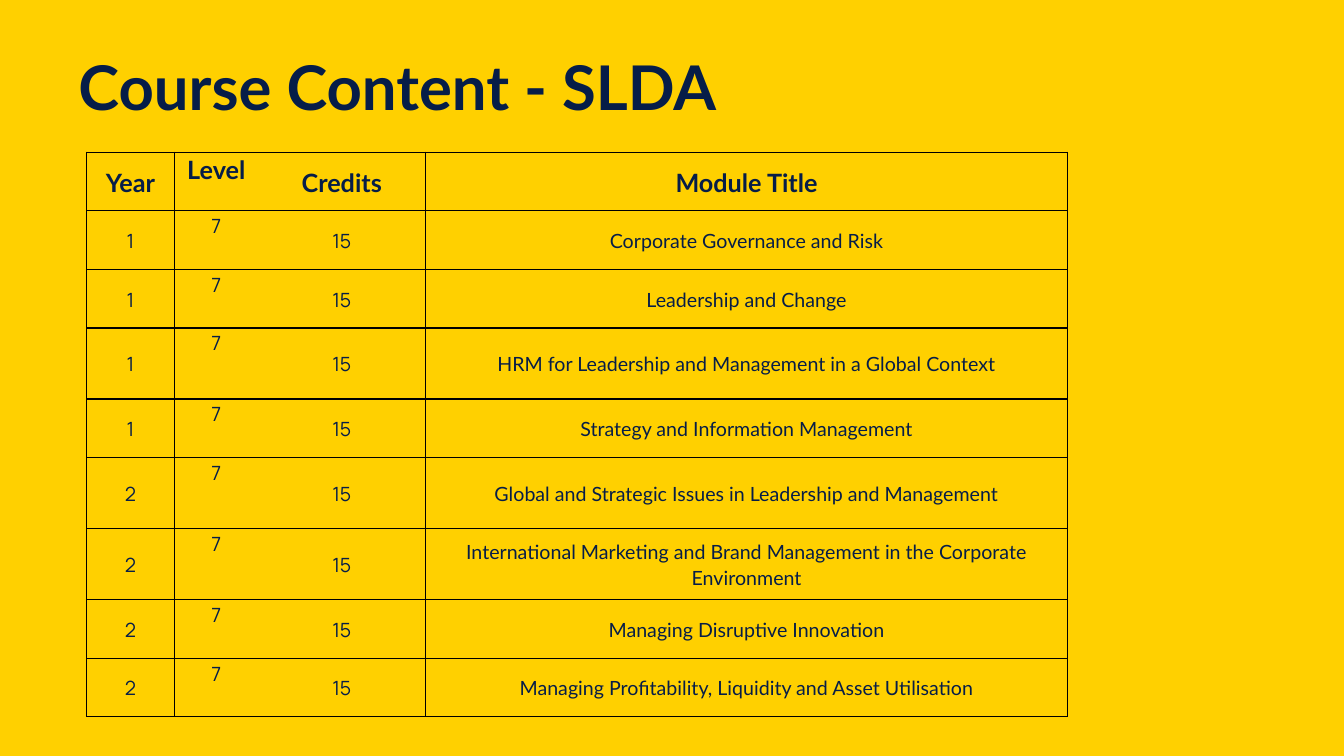
from dataclasses import dataclass

from lxml import etree
from pptx import Presentation
from pptx import util as u
from pptx.dml.color import RGBColor
from pptx.enum import text
from pptx.oxml import ns


@dataclass(frozen=True)
class Theme:
    background: str = "FFD000"
    ink: str = "061D48"
    border: str = "000000"
    border_width: float = 1
    text_font: str = "Lato"
    number_font: str = "Manrope"
    title_size: float = 44
    header_size: float = 18
    body_size: float = 14


THEME = Theme()
SLIDE_WIDTH = u.Inches(13.33)
SLIDE_HEIGHT = u.Inches(7.5)

HEADERS = ("Year", "Level", "Credits", "Module Title")
LEVEL, CREDITS, MODULE = 1, 2, 3
COLUMN_SHARES = (6.53, 6.23, 12.45, 47.79)
ROW_SHARE, TALL_ROW_SHARE = 7.75, 9.4
TALL_ROWS = (3, 5, 6)
MODULES = (
    ("1", "Corporate Governance and Risk"),
    ("1", "Leadership and Change"),
    ("1", "HRM for Leadership and Management in a Global Context"),
    ("1", "Strategy and Information Management"),
    ("2", "Global and Strategic Issues in Leadership and Management"),
    ("2", "International Marketing and Brand Management in the Corporate Environment"),
    ("2", "Managing Disruptive Innovation"),
    ("2", "Managing Profitability, Liquidity and Asset Utilisation"),
)


def across(percent):
    return round(SLIDE_WIDTH * percent / 100)


def down(percent):
    return round(SLIDE_HEIGHT * percent / 100)


def add_span(para, wording, font, size, bold=False):
    span = para.add_run()
    span.text = wording
    span.font.name = font
    span.font.size = u.Pt(size)
    span.font.bold = bold
    span.font.color.rgb = RGBColor.from_string(THEME.ink)


def add_title(page, wording):
    box = page.shapes.add_textbox(across(5.1), down(5.33), across(88.07), down(13.2))
    frame = box.text_frame
    frame.word_wrap = True
    frame.vertical_anchor = text.MSO_ANCHOR.MIDDLE
    para = frame.paragraphs[0]
    para.line_spacing = 0.9
    add_span(para, wording, THEME.text_font, THEME.title_size, True)


def set_borders(cell, open_side):
    properties = cell._tc.get_or_add_tcPr()
    for side in "LRTB":
        line = etree.SubElement(properties, ns.qn(f"a:ln{side}"))
        line.set("w", str(u.Pt(THEME.border_width)))
        if side == open_side:
            etree.SubElement(line, ns.qn("a:noFill"))
        else:
            fill = etree.SubElement(line, ns.qn("a:solidFill"))
            etree.SubElement(fill, ns.qn("a:srgbClr")).set("val", THEME.border)


def fill_cell(cell, wording, column, is_header):
    is_level = column == LEVEL
    set_borders(cell, {LEVEL: "R", CREDITS: "L"}.get(column))
    cell.fill.background()
    cell.margin_left = cell.margin_right = u.Inches(0 if is_level else 0.07)
    cell.margin_top = cell.margin_bottom = 0
    cell.vertical_anchor = text.MSO_ANCHOR.TOP if is_level else text.MSO_ANCHOR.MIDDLE
    para = cell.text_frame.paragraphs[0]
    para.alignment = text.PP_ALIGN.CENTER
    para.line_spacing = 1.07
    para.space_after = u.Pt(8)
    if is_level:
        para.space_before = u.Pt(6)
    font = THEME.text_font if is_header or column == MODULE else THEME.number_font
    size = THEME.header_size if is_header else THEME.body_size
    add_span(para, wording, font, size, is_header)


def add_module_table(page):
    rows = [HEADERS] + [(year, "7", "15", module) for year, module in MODULES]
    heights = [TALL_ROW_SHARE if index in TALL_ROWS else ROW_SHARE for index in range(len(rows))]
    table = page.shapes.add_table(
        len(rows), len(HEADERS), across(6.45), down(20.13),
        across(sum(COLUMN_SHARES)), down(sum(heights)),
    ).table
    table.first_row = False
    table.horz_banding = False
    for column, share in zip(table.columns, COLUMN_SHARES):
        column.width = across(share)
    for row_index, (row, share) in enumerate(zip(rows, heights)):
        table.rows[row_index].height = down(share)
        for column_index, wording in enumerate(row):
            fill_cell(table.cell(row_index, column_index), wording, column_index, row_index == 0)


def main():
    deck = Presentation()
    deck.slide_width = SLIDE_WIDTH
    deck.slide_height = SLIDE_HEIGHT
    page = deck.slides.add_slide(deck.slide_layouts[6])
    page.background.fill.solid()
    page.background.fill.fore_color.rgb = RGBColor.from_string(THEME.background)
    add_title(page, "Course Content - SLDA")
    add_module_table(page)
    deck.save("out.pptx")


if __name__ == "__main__":
    main()
